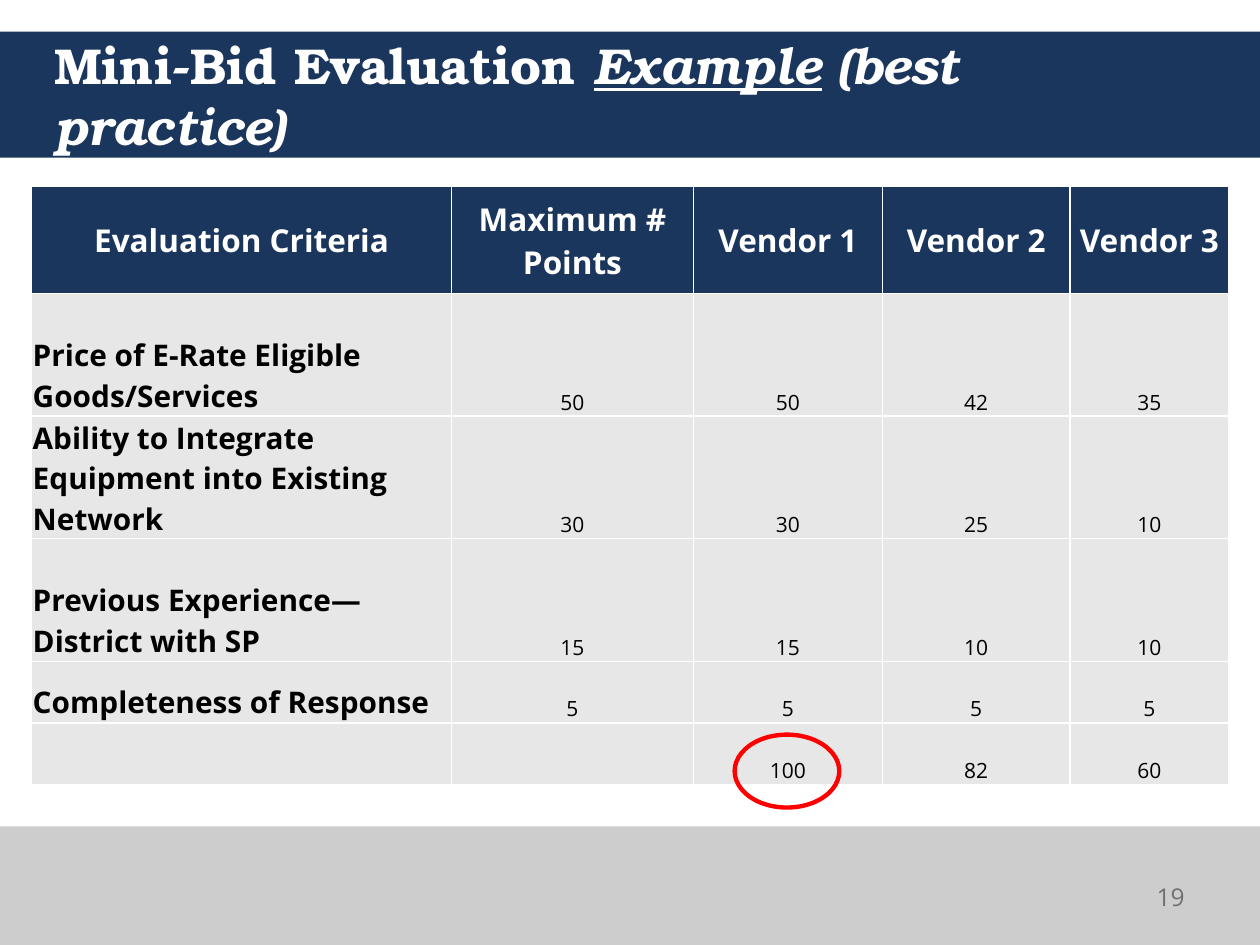
"""Build the mini-bid evaluation slide with its scoring table."""
from dataclasses import dataclass
from typing import Any

import pptx
import pptx.dml.color
import pptx.enum.shapes
import pptx.enum.text
import pptx.oxml
import pptx.oxml.ns
import pptx.util

Cm = pptx.util.Cm
Pt = pptx.util.Pt
ALIGN = pptx.enum.text.PP_ALIGN
ANCHOR = pptx.enum.text.MSO_ANCHOR
SHAPE = pptx.enum.shapes.MSO_SHAPE


@dataclass(frozen=True)
class Theme:
    title_font: str = "TeX Gyre Bonum"
    body_font: str = "Open Sans"
    navy: str = "1B365D"
    footer: str = "CDCDCD"
    cell: str = "E7E7E7"
    white: str = "FFFFFF"
    black: str = "000000"
    grey: str = "6E7073"
    red: str = "FF0000"
    title_size: float = 28.8
    header_size: float = 18
    criterion_size: float = 17
    score_size: float = 12
    number_size: float = 14
    ring_width: float = 2.5
    border_width: float = 1


@dataclass(frozen=True)
class Box:
    left: float
    top: float
    width: float
    height: float

    def lengths(self) -> list[int]:
        return [Cm(v) for v in (self.left, self.top, self.width, self.height)]


@dataclass(frozen=True)
class CellStyle:
    fill: str
    color: str
    size: float
    bold: bool
    align: Any
    anchor: Any


T = Theme()
HEADER = CellStyle(T.navy, T.white, T.header_size, True, ALIGN.CENTER, ANCHOR.MIDDLE)
CRITERION = CellStyle(T.cell, T.black, T.criterion_size, True, ALIGN.LEFT, ANCHOR.BOTTOM)
SCORE = CellStyle(T.cell, T.black, T.score_size, False, ALIGN.CENTER, ANCHOR.BOTTOM)

TITLE_BAND = Box(0, 0.64, 25.4, 2.54)
FOOTER_BAND = Box(0, 16.66, 25.4, 2.39)
TITLE = Box(0.84, 0.64, 23.06, 2.54)
PAGE_NUMBER = Box(22.86, 17.65, 1.27, 1.02)
TABLE = Box(0.64, 3.76, 24.13, 12.06)
WINNER_RING = Box(14.81, 14.81, 2.11, 1.47)

COLUMNS = (8.46, 4.88, 3.81, 3.78, 3.2)
ROWS = (2.16, 2.47, 2.47, 2.47, 1.24, 1.24)
SCORES = (
    ("Evaluation Criteria", "Maximum # Points", "Vendor 1", "Vendor 2", "Vendor 3"),
    ("Price of E-Rate Eligible Goods/Services", "50", "50", "42", "35"),
    ("Ability to Integrate Equipment into Existing Network", "30", "30", "25", "10"),
    ("Previous Experience—\nDistrict with SP", "15", "15", "10", "10"),
    ("Completeness of Response", "5", "5", "5", "5"),
    ("", "", "100", "82", "60"),
)
TITLE_RUNS = (
    ("Mini-Bid Evaluation ", {}),
    ("Example", {"italic": True, "underline": True}),
    (" (best practice)", {"italic": True}),
)


def rgb(color: str) -> Any:
    return pptx.dml.color.RGBColor.from_string(color)


def apply(target: Any, values: dict[str, Any]) -> None:
    for name, value in values.items():
        setattr(target, name, value)


def format_run(r: Any, font: str, size: float, color: str, **extra: Any) -> None:
    apply(r.font, {"name": font, "size": Pt(size), **extra})
    r.font.color.rgb = rgb(color)


def place(sp: Any, box: Box) -> None:
    apply(sp, dict(zip(("left", "top", "width", "height"), box.lengths())))


def add_band(s: Any, box: Box, color: str) -> None:
    sp = s.shapes.add_shape(SHAPE.RECTANGLE, *box.lengths())
    sp.shadow.inherit = False
    sp.fill.solid()
    sp.fill.fore_color.rgb = rgb(color)
    sp.line.fill.background()


def add_title(s: Any) -> None:
    sp = s.shapes.title
    s.shapes._spTree.append(sp._element)
    place(sp, TITLE)
    tf = sp.text_frame
    apply(tf, {"word_wrap": True, "vertical_anchor": ANCHOR.MIDDLE,
               "auto_size": pptx.enum.text.MSO_AUTO_SIZE.NONE})
    p = tf.paragraphs[0]
    p.alignment = ALIGN.LEFT
    for text, style in TITLE_RUNS:
        r = p.add_run()
        r.text = text
        format_run(r, T.title_font, T.title_size, T.white, bold=True, **style)


def add_page_number(s: Any, text: str) -> None:
    tf = s.shapes.add_textbox(*PAGE_NUMBER.lengths()).text_frame
    tf.word_wrap = True
    p = tf.paragraphs[0]
    p.alignment = ALIGN.RIGHT
    r = p.add_run()
    r.text = text
    format_run(r, T.body_font, T.number_size, T.grey)


def set_borders(cell: Any) -> None:
    props = cell._tc.get_or_add_tcPr()
    for index, side in enumerate(("lnL", "lnR", "lnT", "lnB")):
        props.insert(index, pptx.oxml.parse_xml(
            f'<a:{side} {pptx.oxml.ns.nsdecls("a")} w="{Pt(T.border_width)}">'
            f'<a:solidFill><a:srgbClr val="{T.white}"/></a:solidFill></a:{side}>'))


def fill_cell(cell: Any, text: str, style: CellStyle) -> None:
    apply(cell, {"margin_left": Cm(0.02), "margin_right": Cm(0.02), "margin_top": Cm(0.02),
                 "margin_bottom": 0, "vertical_anchor": style.anchor})
    cell.fill.solid()
    cell.fill.fore_color.rgb = rgb(style.fill)
    set_borders(cell)
    p = cell.text_frame.paragraphs[0]
    p.alignment = style.align
    p.text = text
    for r in p.runs:
        format_run(r, T.body_font, style.size, style.color, bold=style.bold)


def add_score_table(s: Any) -> None:
    table = s.shapes.add_table(len(ROWS), len(COLUMNS), *TABLE.lengths()).table
    for column, width in zip(table.columns, COLUMNS):
        column.width = Cm(width)
    for row, height in zip(table.rows, ROWS):
        row.height = Cm(height)
    for i, values in enumerate(SCORES):
        for j, text in enumerate(values):
            style = HEADER if i == 0 else CRITERION if j == 0 else SCORE
            fill_cell(table.cell(i, j), text, style)


def add_winner_ring(s: Any) -> None:
    sp = s.shapes.add_shape(SHAPE.OVAL, *WINNER_RING.lengths())
    sp.shadow.inherit = False
    sp.fill.background()
    sp.line.color.rgb = rgb(T.red)
    sp.line.width = Pt(T.ring_width)


def main() -> None:
    prs = pptx.Presentation()
    apply(prs, {"slide_width": Cm(25.4), "slide_height": Cm(19.05)})
    s = prs.slides.add_slide(prs.slide_layouts.get_by_name("Title Only"))
    add_band(s, TITLE_BAND, T.navy)
    add_band(s, FOOTER_BAND, T.footer)
    add_title(s)
    add_page_number(s, "19")
    add_score_table(s)
    add_winner_ring(s)
    prs.save("out.pptx")


if __name__ == "__main__":
    main()
